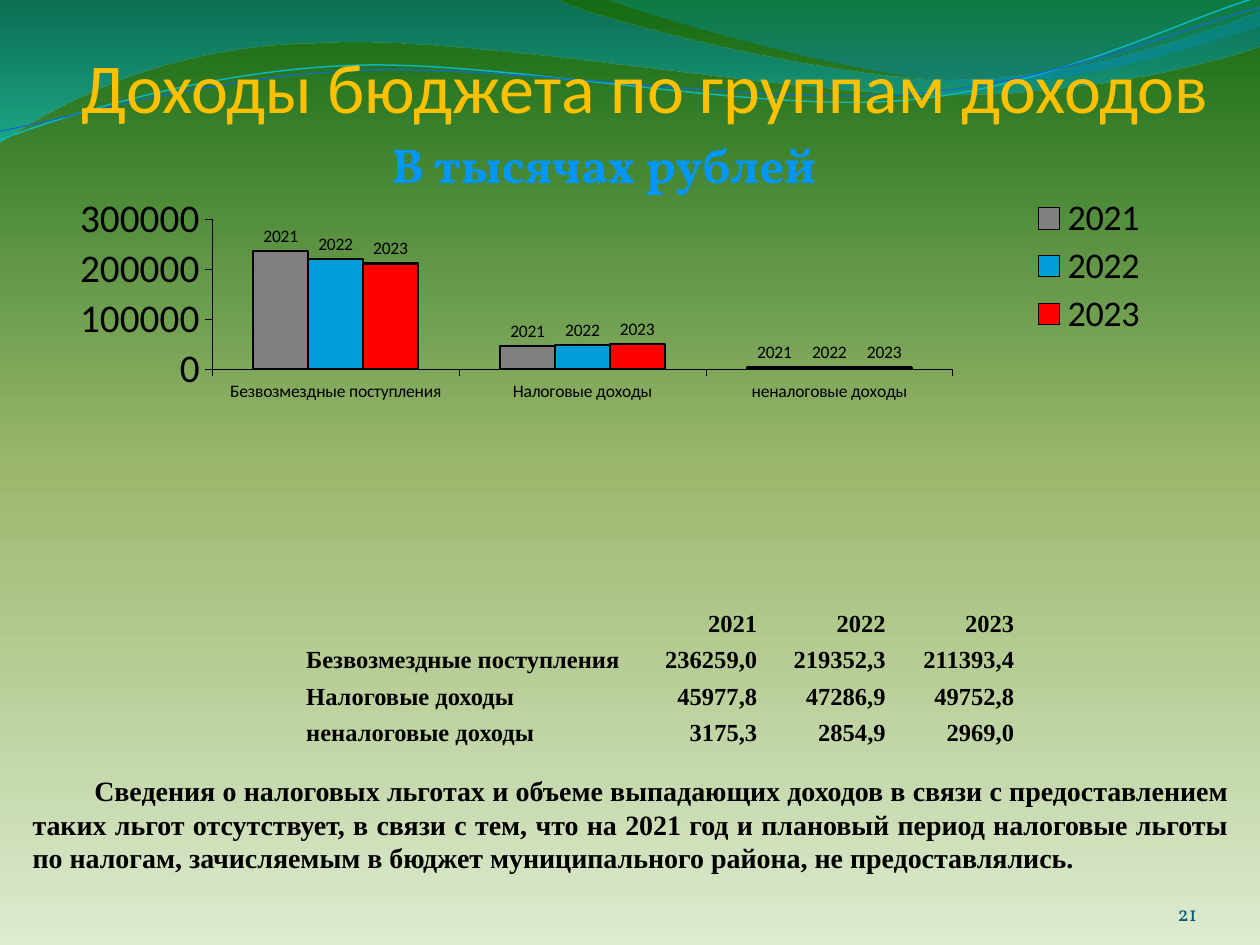
from dataclasses import dataclass
from math import cos, radians, sin

from lxml.etree import SubElement
from pptx import Presentation
from pptx.chart.data import CategoryChartData
from pptx.dml.color import RGBColor
from pptx.enum.chart import XL_CHART_TYPE, XL_LABEL_POSITION, XL_LEGEND_POSITION, XL_TICK_MARK
from pptx.enum.text import MSO_ANCHOR as Anchor, MSO_AUTO_SIZE as AutoSize, PP_ALIGN as Align
from pptx.oxml.ns import qn
from pptx.util import Inches, Pt

COLORS = {"black": "000000", "title": "FFC000", "number": "045D75", "cyan": "0AB8BF",
          "blue": "0F6FC6", "2021": "808080", "2022": "009DD9", "2023": "FF0000"}
# Gradient stops: position %, colour, opacity %
MEADOW = [(0, "DDEBCF", 100), (50, "9CB86E", 100), (100, "156B13", 100)]
LEFT_WAVE = [(0, "0074A1", 45), (100, "00C6CF", 55)]
RIGHT_WAVE = [(0, "00A1A9", 30), (80, "008BBF", 45)]
SKY_TEXT = [(0, "7DC4FF", 100), (75, "0497F9", 100), (100, "0074A1", 100)]

CATEGORIES = ["Безвозмездные поступления", "Налоговые доходы", "неналоговые доходы"]
SERIES = {"2021": (236000, 46000, 3000), "2022": (219000, 47000, 3000),
          "2023": (211000, 50000, 3000)}
TABLE_ROWS = [("", *SERIES),
              (CATEGORIES[0], "236259,0", "219352,3", "211393,4"),
              (CATEGORIES[1], "45977,8", "47286,9", "49752,8"),
              (CATEGORIES[2], "3175,3", "2854,9", "2969,0")]
NO_STYLE_NO_GRID = "{2D5ABB26-0587-4C30-8999-92F81FD0307C}"
TAX_NOTE = (
    "Сведения о налоговых льготах и объеме выпадающих доходов в связи с предоставлением "
    "таких льгот отсутствует, в связи с тем, что на 2021 год и плановый период налоговые льготы "
    "по налогам, зачисляемым в бюджет муниципального района, не предоставлялись.")


@dataclass
class Wave:
    """Segments hold one end point, or two control points and an end point."""
    start: tuple
    segments: list
    gradient: list | None = None
    color: str = ""
    width: float = 0
    rotation: float = 0
    center: tuple = (0, 0)


@dataclass
class Label:
    text: str
    box: tuple
    size: float
    font: str
    align: Align
    color: str = "black"
    bold: bool = False
    anchor: Anchor = Anchor.TOP
    insets: tuple = (0.1, 0.05, 0.1, 0.05)
    indent: float = 0
    grow: bool = False
    gradient: list | None = None


WAVES = [
    Wave((0, -0.01), [
        (4.4, -0.01), (4.76, 0.17, 6.64, 0.63, 7.58, 0.63), (8.53, 0.63, 9.58, 0.26, 10, 0.09),
        (10.01, 0.36), (9.83, 0.44, 8.7, 0.76, 7.46, 0.75), (6.22, 0.75, 3.82, 0.28, 2.57, 0.34),
        (1.29, 0.35, 0.46, 0.83, -0.01, 1.13), (0, -0.01)], LEFT_WAVE),
    Wave((4.79, -0.01), [
        (5.09, 0.11, 6.82, 0.62, 7.69, 0.65), (8.56, 0.69, 9.61, 0.32, 10, 0.21), (10, 0),
        (4.79, -0.01)], RIGHT_WAVE),
    Wave((0, 1.11), [
        (0.48, 0.93, 1.58, 0.57, 2.77, 0.52), (3.95, 0.47, 5.93, 0.89, 7.13, 0.8),
        (8.33, 0.71, 9.38, 0.15, 9.98, -0.02)], None, "cyan", 0.85, 357.3, (4.99, 0.57)),
    Wave((0, 1.04), [
        (0.47, 0.96, 1.64, 0.61, 2.83, 0.56), (4.03, 0.51, 5.97, 0.83, 7.17, 0.75),
        (8.36, 0.67, 9.41, 0.21, 10, 0.06)], None, "blue", 0.75, 357.3, (5, 0.59)),
]
TITLE = Label("Доходы бюджета по группам доходов", (0.62, 0.31, 9, 0.7), 40, "Calibri",
              Align.CENTER, "title", anchor=Anchor.BOTTOM, insets=(0, 0.05, 0, 0))
LABELS = [
    Label("В тысячах рублей", (2.73, 1.02, 4.12, 0.57), 28, "Vollkorn", Align.CENTER,
          bold=True, grow=True, gradient=SKY_TEXT),
    Label("21", (8.67, 6.95, 0.83, 0.4), 12, "Vollkorn", Align.RIGHT, "number",
          anchor=Anchor.BOTTOM, insets=(0, 0, 0, 0)),
    Label(TAX_NOTE, (0.16, 6.09, 9.69, 1.18), 16, "Times New Roman", Align.JUSTIFY,
          bold=True, indent=0.49, grow=True),
]


def set_gradient(fill, owner, stops: list, angle: int) -> None:
    """Give the fill of the XML element owner its stops and a clockwise angle."""
    fill.gradient()
    grad = owner.find(".//" + qn("a:gradFill"))
    stop_list = grad.find(qn("a:gsLst"))
    for old in list(stop_list):
        stop_list.remove(old)
    for position, color, opacity in stops:
        stop = SubElement(stop_list, qn("a:gs"), pos=str(position * 1000))
        clr = SubElement(stop, qn("a:srgbClr"), val=color)
        if opacity < 100:
            SubElement(clr, qn("a:alpha"), val=str(opacity * 1000))
    grad.find(qn("a:lin")).set("ang", str(angle * 60000))


def set_font(font, size: float, name: str, color: str = "black", bold: bool = False) -> None:
    for key, value in {"size": Pt(size), "name": name, "bold": bold}.items():
        setattr(font, key, value)
    font.color.rgb = RGBColor.from_string(COLORS[color])


def set_line(line, color: str, width: float) -> None:
    line.color.rgb, line.width = RGBColor.from_string(COLORS[color]), Pt(width)


def draw_wave(s, wave: Wave) -> None:
    turn, (cx, cy) = radians(-wave.rotation), wave.center

    def place(x: float, y: float) -> tuple:
        """Undo the rotation that the shape itself will apply."""
        dx, dy = x - cx, y - cy
        return (Inches(cx + dx * cos(turn) - dy * sin(turn)),
                Inches(cy + dx * sin(turn) + dy * cos(turn)))

    segments = [[place(*pt) for pt in zip(seg[::2], seg[1::2])] for seg in wave.segments]
    builder = s.shapes.build_freeform(*place(*wave.start))
    builder.add_line_segments([seg[-1] for seg in segments], close=bool(wave.gradient))
    sp = builder.convert_to_shape()
    lines = sp.element.findall(".//" + qn("a:lnTo"))
    for line, points in zip(lines, segments):
        if len(points) == 3:
            curve = line.makeelement(qn("a:cubicBezTo"))
            for x, y in points:
                SubElement(curve, qn("a:pt"), x=str(x - sp.left), y=str(y - sp.top))
            line.getparent().replace(line, curve)
    sp.rotation = wave.rotation
    sp.shadow.inherit = False
    if wave.gradient:
        set_gradient(sp.fill, sp.element.spPr, wave.gradient, 90)
        sp.line.fill.background()
    else:
        sp.fill.background()
        set_line(sp.line, wave.color, wave.width)


def write_label(sp, label: Label) -> None:
    sp.left, sp.top, sp.width, sp.height = map(Inches, label.box)
    tf = sp.text_frame
    tf.word_wrap, tf.vertical_anchor = True, label.anchor
    tf.auto_size = AutoSize.SHAPE_TO_FIT_TEXT if label.grow else AutoSize.NONE
    for side, inset in zip(("left", "top", "right", "bottom"), label.insets):
        setattr(tf, f"margin_{side}", Inches(inset))
    p = tf.paragraphs[0]
    p.alignment = label.align
    if label.indent:
        p._p.get_or_add_pPr().set("indent", str(Inches(label.indent)))
    r = p.add_run()
    r.text = label.text
    set_font(r.font, label.size, label.font, label.color, label.bold)
    if label.gradient:
        set_gradient(r.font.fill, r._r, label.gradient, 90)


def set_layout(parent, index: int, box: tuple, **target: str) -> None:
    """Place a chart part by fractions of the chart's size."""
    for old in parent.findall(qn("c:layout")):
        parent.remove(old)
    layout = parent.makeelement(qn("c:layout"))
    parent.insert(index, layout)
    manual = SubElement(layout, qn("c:manualLayout"))
    for tag, value in {**target, "xMode": "edge", "yMode": "edge", **dict(zip("xywh", box))}.items():
        SubElement(manual, qn(f"c:{tag}"), val=str(value))


def draw_chart(s) -> None:
    data = CategoryChartData()
    data.categories = CATEGORIES
    for name, values in SERIES.items():
        data.add_series(name, values)
    box = map(Inches, (0.48, 1.48, 8.92, 2.22))
    chart = s.shapes.add_chart(XL_CHART_TYPE.COLUMN_CLUSTERED, *box, data).chart
    set_font(chart.font, 22.4, "Vollkorn")
    chart.has_title, chart.has_legend = False, True
    chart.legend.position, chart.legend.include_in_layout = XL_LEGEND_POSITION.RIGHT, False
    set_font(chart.legend.font, 20.6, "Calibri")
    set_layout(chart.legend._element, 1, (0.85, 0.02, 0.13, 0.53))
    set_layout(chart._chartSpace.chart.plotArea, 0, (0.135, 0.116, 0.659, 0.537),
               layoutTarget="inner")
    for axis, size in ((chart.category_axis, 10), (chart.value_axis, 22.4)):
        axis.has_major_gridlines, axis.major_tick_mark = False, XL_TICK_MARK.OUTSIDE
        set_font(axis.tick_labels.font, size, "Calibri")
        set_line(axis.format.line, "black", 0.31)
    plot = chart.plots[0]
    plot.gap_width, plot.overlap, plot.vary_by_categories = 150, 0, False
    for series in plot.series:
        series.format.fill.solid()
        series.format.fill.fore_color.rgb = RGBColor.from_string(COLORS[series.name])
        set_line(series.format.line, "black", 1.25)
        labels = series.data_labels
        labels.show_series_name, labels.show_value = True, False
        labels.position = XL_LABEL_POSITION.OUTSIDE_END
        set_font(labels.font, 10, "Calibri")


def draw_table(s) -> None:
    box = map(Inches, (2.42, 4.77, 5.63, 1.17))
    table = s.shapes.add_table(len(TABLE_ROWS), len(TABLE_ROWS[0]), *box).table
    table.first_row = table.horz_banding = False
    table._tbl.tblPr.find(qn("a:tableStyleId")).text = NO_STYLE_NO_GRID
    for column, width in zip(table.columns, (2.57, 1.03, 1.02, 1.02)):
        column.width = Inches(width)
    for i, row in enumerate(TABLE_ROWS):
        table.rows[i].height = Inches(0.29)
        for j, text in enumerate(row):
            cell = table.cell(i, j)
            cell.fill.background()
            cell.vertical_anchor = Anchor.BOTTOM
            cell.margin_left = cell.margin_top = cell.margin_right = Inches(0.01)
            cell.margin_bottom = 0
            p = cell.text_frame.paragraphs[0]
            p.alignment = Align.RIGHT if j else Align.LEFT
            if text:
                r = p.add_run()
                r.text = text
                set_font(r.font, 14, "Times New Roman", bold=True)
            else:
                SubElement(p._p, qn("a:endParaRPr"), sz="1400")


def main() -> None:
    prs = Presentation()
    prs.slide_width, prs.slide_height = Inches(10), Inches(7.5)
    s = prs.slides.add_slide(prs.slide_layouts[5])
    set_gradient(s.background.fill, s.element, MEADOW, 270)
    for wave in WAVES:
        draw_wave(s, wave)
    title = s.shapes.title
    s.shapes.element.append(title.element)  # bring in front of the waves
    write_label(title, TITLE)
    draw_chart(s)
    draw_table(s)
    for label in LABELS:
        write_label(s.shapes.add_textbox(0, 0, 0, 0), label)
    prs.save("out.pptx")


if __name__ == "__main__":
    main()
